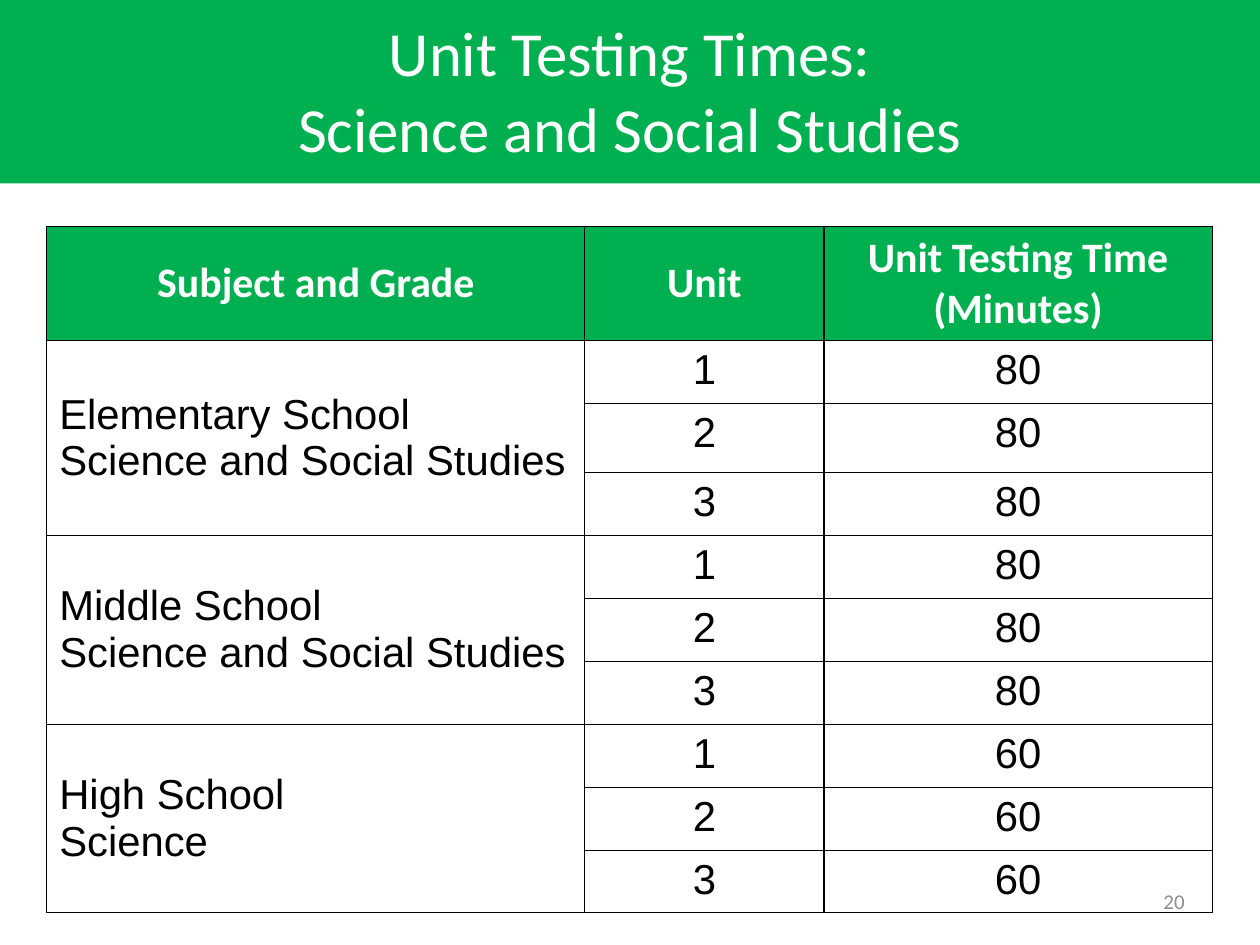
from lxml import etree
from pptx import Presentation
from pptx.dml.color import RGBColor
from pptx.enum.shapes import MSO_SHAPE
from pptx.enum.text import MSO_ANCHOR, PP_ALIGN
from pptx.oxml.ns import qn
from pptx.util import Pt

PX = 9144  # 100 px to the inch
GREEN = RGBColor(0x00, 0xB0, 0x50)
WHITE = RGBColor(0xFF, 0xFF, 0xFF)
BLACK = RGBColor(0x00, 0x00, 0x00)
GRAY = RGBColor(0x8C, 0x8C, 0x8C)
LEFT, CENTER, RIGHT = PP_ALIGN.LEFT, PP_ALIGN.CENTER, PP_ALIGN.RIGHT
TOP, MIDDLE = MSO_ANCHOR.TOP, MSO_ANCHOR.MIDDLE
RECTANGLE = MSO_SHAPE.RECTANGLE


def add_run(paragraph, text, size, font_name, color, bold=False):
    run = paragraph.add_run()
    run.text = text
    run.font.size = Pt(size)
    run.font.name = font_name
    run.font.color.rgb = color
    run.font.bold = bold


def set_margins(box):
    box.margin_left = box.margin_right = 14 * PX
    box.margin_top = box.margin_bottom = 7 * PX


presentation = Presentation()
presentation.slide_width = 1422 * PX
presentation.slide_height = 1066 * PX
slide = presentation.slides.add_slide(presentation.slide_layouts[6])

# Title band
band = slide.shapes.add_shape(RECTANGLE, 0, -6 * PX, 1422 * PX, 213 * PX)
band.shadow.inherit = False
band.fill.solid()
band.fill.fore_color.rgb = GREEN
band.line.fill.background()

# Title and page number
text_boxes = [
    (71, 12, 1280, 178, ["Unit Testing Times:", "Science and Social Studies"], 51, WHITE, CENTER),
    (1019, 988, 332, 57, ["20"], 17, GRAY, RIGHT),
]
for left, top, width, height, lines, size, color, alignment in text_boxes:
    text_box = slide.shapes.add_textbox(left * PX, top * PX, width * PX, height * PX)
    frame = text_box.text_frame
    frame.word_wrap = True
    frame.vertical_anchor = MIDDLE
    set_margins(frame)
    paragraph = frame.paragraphs[0]
    paragraph.alignment = alignment
    for index, line in enumerate(lines):
        if index:
            paragraph.add_line_break()
        add_run(paragraph, line, size, "Calibri", color)

# Table content: each school level spans three units
headers = ["Subject and Grade", "Unit", "Unit Testing Time (Minutes)"]
levels = [
    (["Elementary School", "Science and Social Studies"], 80),
    (["Middle School", "Science and Social Studies"], 80),
    (["High School", "Science"], 60),
]
units = [1, 2, 3]
rows = [[[header] for header in headers]]
for subject, minutes in levels:
    for unit in units:
        rows.append([subject if unit == 1 else [], [str(unit)], [str(minutes)]])

# Table grid
column_widths = [607, 270, 438]
row_heights = [128, 71, 78] + [71] * 7
table = slide.shapes.add_table(
    len(rows), len(headers), 53 * PX, 256 * PX,
    sum(column_widths) * PX, sum(row_heights) * PX).table
table.first_row = False
table.horz_banding = False
for column, width in zip(table.columns, column_widths):
    column.width = width * PX
for row, height in zip(table.rows, row_heights):
    row.height = height * PX
for first in range(1, len(rows), len(units)):
    table.cell(first, 0).merge(table.cell(first + len(units) - 1, 0))

# Table cells
for row_index, row_lines in enumerate(rows):
    is_header = row_index == 0
    for column_index, lines in enumerate(row_lines):
        cell = table.cell(row_index, column_index)
        set_margins(cell)
        is_middle = column_index == 0 or (is_header and column_index == 1)
        cell.vertical_anchor = MIDDLE if is_middle else TOP

        properties = cell._tc.get_or_add_tcPr()
        for side in ("a:lnL", "a:lnR", "a:lnT", "a:lnB"):
            border = etree.SubElement(properties, qn(side), w=str(Pt(1)))
            border_fill = etree.SubElement(border, qn("a:solidFill"))
            etree.SubElement(border_fill, qn("a:srgbClr"), val=str(BLACK))

        if is_header:
            cell.fill.solid()
            cell.fill.fore_color.rgb = GREEN
        else:
            cell.fill.background()

        frame = cell.text_frame
        for index, line in enumerate(lines):
            paragraph = frame.add_paragraph() if index else frame.paragraphs[0]
            paragraph.alignment = CENTER if is_header or column_index else LEFT
            if is_header:
                add_run(paragraph, line, 34, "Calibri", WHITE, bold=True)
            else:
                add_run(paragraph, line, 34, "Arial", BLACK)

presentation.save("out.pptx")
